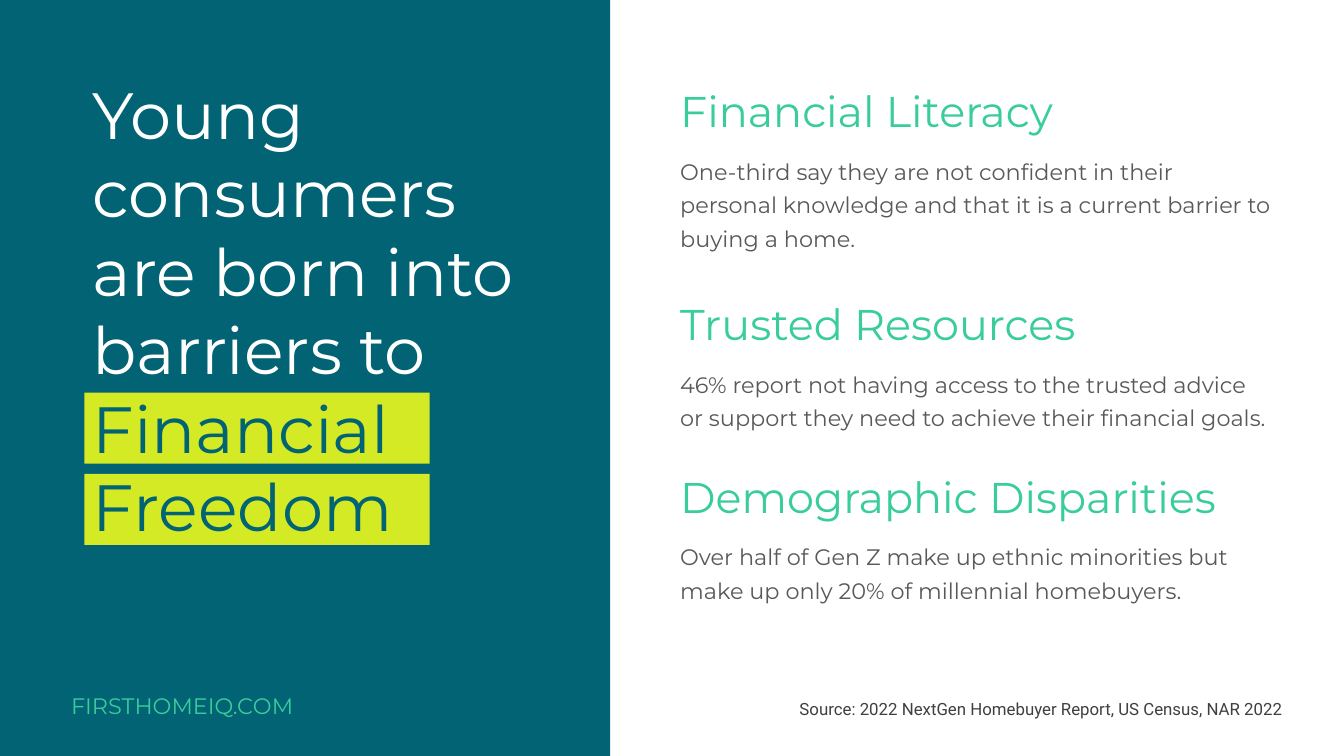
from pptx import Presentation
from pptx.dml.color import RGBColor
from pptx.enum.shapes import MSO_SHAPE
from pptx.enum.text import PP_ALIGN
from pptx.util import Pt

TEAL = RGBColor(0x01, 0x63, 0x73)
LIME = RGBColor(0xD3, 0xEA, 0x24)
GREEN = RGBColor(0x39, 0xCC, 0x9C)
WHITE = RGBColor(0xFF, 0xFF, 0xFF)
GREY = RGBColor(0x59, 0x59, 0x59)
DARK = RGBColor(0x40, 0x40, 0x40)

TITLE = [
    ("Young", WHITE),
    ("consumers are born into barriers to", WHITE),
    ("Financial Freedom", TEAL),
]
TOPICS = [
    ("Financial Literacy", 0,
     "One-third say they are not confident in their personal knowledge "
     "and that it is a current barrier to buying a home."),
    ("Trusted Resources", 24.5,
     "46% report not having access to the trusted advice or support "
     "they need to achieve their financial goals."),
    ("Demographic Disparities", 21,
     "Over half of Gen Z make up ethnic minorities but make up only "
     "20% of millennial homebuyers."),
]


def add_rect(slide, left, top, width, height, color):
    s = slide.shapes.add_shape(
        MSO_SHAPE.RECTANGLE, Pt(left), Pt(top), Pt(width), Pt(height))
    s.shadow.inherit = False
    s.fill.solid()
    s.fill.fore_color.rgb = color
    s.line.fill.background()


def add_text_frame(slide, left, top, width, height, inset_x, inset_y):
    tf = slide.shapes.add_textbox(
        Pt(left), Pt(top), Pt(width), Pt(height)).text_frame
    tf.word_wrap = True
    tf.margin_left = tf.margin_right = Pt(inset_x)
    tf.margin_top = tf.margin_bottom = Pt(inset_y)
    return tf


def add_line(tf, text, size, color, font="Montserrat"):
    p = tf.add_paragraph() if tf.text else tf.paragraphs[0]
    p.text = text
    f = p.runs[0].font
    f.name, f.size, f.color.rgb = font, Pt(size), color
    return p


def add_title_panel(slide, left, top, width, height):
    add_rect(slide, left, top, width, height, TEAL)
    for row in range(2):
        add_rect(slide, left + 45.2, top + 210.4 + row * 43.5, 185, 38, LIME)
    tf = add_text_frame(slide, left + 46.8, top + 38.2, 250.6, 221, 2.9, 1.5)
    for text, color in TITLE:
        add_line(tf, text, 35, color)
    tf = add_text_frame(slide, left + 31, top + 363.6, 204.5, 16.6, 7.2, 7.2)
    add_line(tf, "FIRSTHOMEIQ.COM", 12, GREEN)


def add_topics_panel(slide, left, top, width, height):
    tf = add_text_frame(slide, left + 31, top + 42.5, width - 62, 300, 6.5, 2.9)
    for heading, gap, body in TOPICS:
        p = add_line(tf, heading, 23, GREEN)
        if gap:
            p.space_before = Pt(gap)
        p = add_line(tf, body, 12, GREY)
        p.line_spacing = 1.25
        p.space_before = Pt(8)
    tf = add_text_frame(slide, left + 39, top + 371.5, width - 69.5, 16.6, 2.9, 2.9)
    p = add_line(tf, "Source: 2022 NextGen Homebuyer Report, US Census, NAR 2022",
                 9, DARK, "Roboto")
    p.alignment = PP_ALIGN.RIGHT


def main():
    prs = Presentation()
    prs.slide_width, prs.slide_height = Pt(720), Pt(405)
    slide = prs.slides.add_slide(prs.slide_layouts[6])
    split = 326.9
    add_title_panel(slide, 0, 0, split, 405)
    add_topics_panel(slide, split, 0, 720 - split, 405)
    prs.save("out.pptx")


if __name__ == "__main__":
    main()
